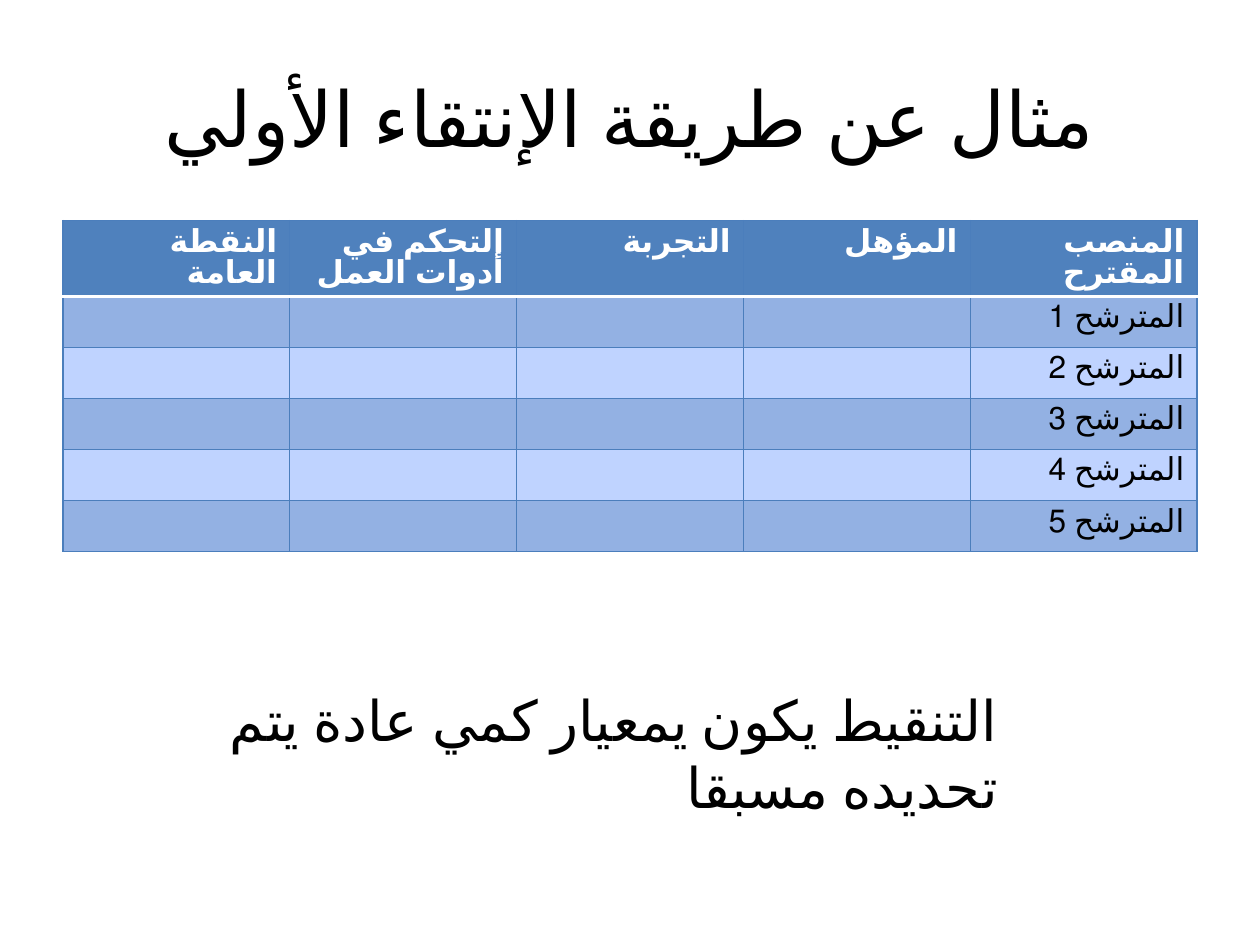
"""Build a slide showing a sample candidate pre-selection grid."""
from dataclasses import dataclass

from lxml.etree import SubElement
from pptx import Presentation
from pptx.dml.color import RGBColor as Rgb
from pptx.enum.lang import MSO_LANGUAGE_ID as Language
from pptx.enum.text import MSO_ANCHOR as Anchor, MSO_AUTO_SIZE as AutoSize, PP_ALIGN as Align
from pptx.oxml import parse_xml
from pptx.oxml.ns import nsdecls, qn
from pptx.util import Inches, Pt

COLOURS = {
    "ink": "000000",
    "paper": "FFFFFF",
    "header": "4F81BD",
    "band": "93B1E3",
    "plain": "BFD3FF",
    "grid": "4B7EBC",
}
SLIDE_WIDTH, SLIDE_HEIGHT = Inches(10), Inches(7.5)
HEADINGS = ("النقطة العامة", "التحكم في أدوات العمل", "التجربة", "المؤهل", "المنصب المقترح")
CANDIDATES = 5
ROW_HEIGHT = Pt(29.2)


@dataclass(frozen=True)
class Area:
    """A rectangle given as shares of the slide's size."""
    left: float
    top: float
    width: float
    height: float

    def lengths(self) -> tuple[int, int, int, int]:
        """Return left, top, width and height in slide units."""
        return (int(self.left * SLIDE_WIDTH), int(self.top * SLIDE_HEIGHT),
                int(self.width * SLIDE_WIDTH), int(self.height * SLIDE_HEIGHT))


@dataclass(frozen=True)
class Statement:
    """A line of text standing on its own."""
    wording: str
    area: Area
    size: int
    align: Align
    anchor: Anchor
    wrap: bool
    fit: AutoSize


@dataclass(frozen=True)
class Border:
    """One edge of a table cell."""
    edge: str
    colour: str
    points: float


STATEMENTS = (
    Statement("مثال عن طريقة الإنتقاء الأولي", Area(0.05, 0.3 / 7.5, 0.9, 1.25 / 7.5),
              44, Align.CENTER, Anchor.MIDDLE, True, AutoSize.NONE),
    Statement("التنقيط يكون يمعيار كمي عادة يتم تحديده مسبقا",
              Area(1.19 / 10, 5.39 / 7.5, 6.83 / 10, 0.64 / 7.5),
              32, Align.RIGHT, Anchor.TOP, False, AutoSize.SHAPE_TO_FIT_TEXT),
)
GRID_AREA = Area(0.05, 1.75 / 7.5, 0.9, 2.63 / 7.5)


def write(frame, wording: str, size: int, colour: str, align: Align, bold: bool = False) -> None:
    """Fill a text frame with one right-to-left Arabic paragraph."""
    frame.text = wording
    paragraph = frame.paragraphs[0]
    paragraph.alignment = align
    paragraph._p.get_or_add_pPr().set("rtl", "1")
    for run in paragraph.runs:
        run.font.name = "Calibri"
        run.font.language_id = Language.ARABIC_ALGERIA
        run.font.size = Pt(size)
        run.font.bold = bold
        run.font.color.rgb = Rgb.from_string(COLOURS[colour])


def draw_statement(slide, statement: Statement) -> None:
    """Place a statement in its own text box."""
    frame = slide.shapes.add_textbox(*statement.area.lengths()).text_frame
    write(frame, statement.wording, statement.size, "ink", statement.align)
    frame.word_wrap = statement.wrap
    frame.auto_size = statement.fit
    frame.vertical_anchor = statement.anchor


def draw_borders(cell, borders: list[Border]) -> None:
    """Put the edge lines ahead of the cell's fill."""
    properties = cell._tc.get_or_add_tcPr()
    for position, border in enumerate(borders):
        line = parse_xml(f'<a:{border.edge} {nsdecls("a")} w="{Pt(border.points)}"/>')
        solid = SubElement(line, qn("a:solidFill"))
        SubElement(solid, qn("a:srgbClr")).set("val", COLOURS[border.colour])
        properties.insert(position, line)


def borders_of(row: int) -> list[Border]:
    """Return the edges of a cell, with a white rule under the headings."""
    rule = {0: "lnB", 1: "lnT"}.get(row)
    return [Border(edge, "paper", 2) if edge == rule else Border(edge, "grid", 0.75)
            for edge in ("lnL", "lnR", "lnT", "lnB")]


def draw_grid(slide) -> None:
    """Draw the headings and one banded row for each candidate."""
    blanks = ("",) * (len(HEADINGS) - 1)
    rows = [HEADINGS] + [(*blanks, f"المترشح {number}") for number in range(1, CANDIDATES + 1)]
    grid = slide.shapes.add_table(len(rows), len(HEADINGS), *GRID_AREA.lengths()).table
    for index, wordings in enumerate(rows):
        grid.rows[index].height = ROW_HEIGHT
        heading = index == 0
        fill = "header" if heading else "band" if index % 2 else "plain"
        for column, wording in enumerate(wordings):
            cell = grid.cell(index, column)
            cell.fill.solid()
            cell.fill.fore_color.rgb = Rgb.from_string(COLOURS[fill])
            draw_borders(cell, borders_of(index))
            if wording:
                write(cell.text_frame, wording, 18, "paper" if heading else "ink",
                      Align.RIGHT, heading)
                cell.text_frame.paragraphs[0].line_spacing = Pt(18)


def main() -> None:
    """Assemble and save the slide."""
    deck = Presentation()
    deck.slide_width, deck.slide_height = SLIDE_WIDTH, SLIDE_HEIGHT
    slide = deck.slides.add_slide(deck.slide_layouts[6])
    title, remark = STATEMENTS
    draw_statement(slide, title)
    draw_grid(slide)
    draw_statement(slide, remark)
    deck.save("out.pptx")


if __name__ == "__main__":
    main()
